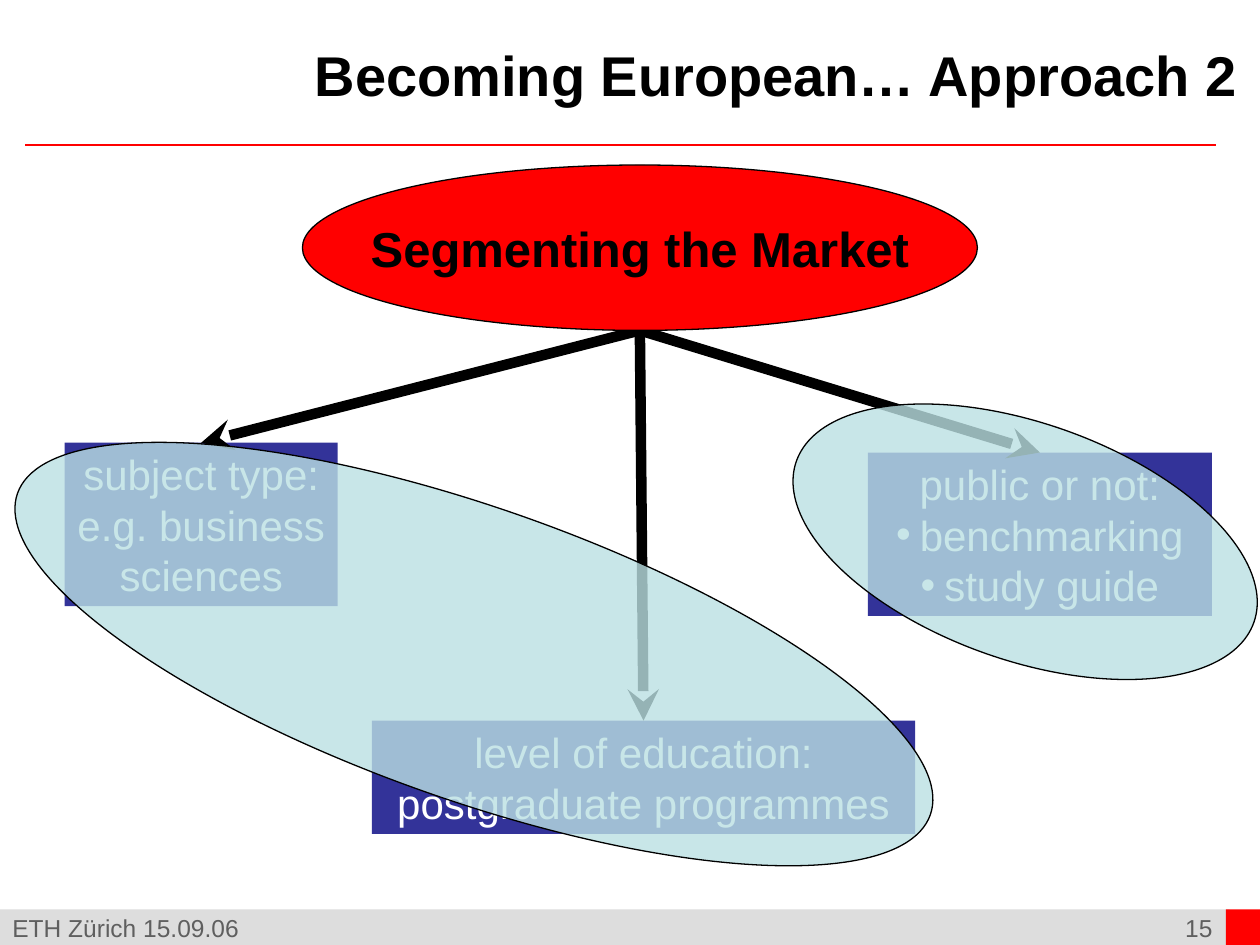
from dataclasses import dataclass

from lxml.etree import SubElement
from pptx import Presentation
from pptx.dml.color import RGBColor
from pptx.enum.shapes import MSO_CONNECTOR, MSO_SHAPE
from pptx.enum.text import MSO_ANCHOR as Anchor, PP_ALIGN as Align
from pptx.oxml.ns import qn
from pptx.util import Pt


@dataclass(frozen=True)
class Theme:
    """Colours, font and type sizes of the slide."""
    red: str = "FF0000"
    black: str = "000000"
    white: str = "FFFFFF"
    navy: str = "333399"
    aqua: str = "BBE0E3"
    band: str = "DDDDDD"
    muted: str = "5F5F5F"
    font: str = "Arial"
    title: int = 32
    hub: int = 28
    body: int = 24
    footer: int = 14
    hairline: float = 0.75
    arrow: float = 6


@dataclass(frozen=True)
class Box:
    """A rectangle in points."""
    left: float
    top: float
    width: float
    height: float

    def inner(self, left, top, width, height):
        """Return a box placed relative to this one."""
        return Box(self.left + left, self.top + top, width, height)

    def lengths(self):
        """Return the four lengths for python-pptx."""
        return [Pt(v) for v in (self.left, self.top, self.width, self.height)]


THEME = Theme()


def rgb(code):
    """Turn a hex code into a colour."""
    return RGBColor.from_string(code)


def write(shape, text, size, color, bold=False, align=Align.LEFT,
          anchor=Anchor.TOP, wrap=True, indent=0, bullets_from=None):
    """Fill a shape with one formatted paragraph per line of text."""
    frame = shape.text_frame
    frame.word_wrap = wrap
    frame.vertical_anchor = anchor
    frame.text = text
    for index, paragraph in enumerate(frame.paragraphs):
        paragraph.alignment = align
        properties = paragraph._p.get_or_add_pPr()
        if indent:
            properties.set("marL", str(Pt(indent)))
            properties.set("indent", str(-Pt(indent)))
        if bullets_from is not None and index >= bullets_from:
            SubElement(properties, qn("a:buFont"), typeface=THEME.font)
            SubElement(properties, qn("a:buChar"), char="•")
        font = paragraph.font
        font.name, font.size, font.bold = THEME.font, Pt(size), bold
        font.color.rgb = rgb(color)


def add_figure(slide, kind, box, fill, outline=None, opacity=None, rotation=0):
    """Add a flat preset shape, optionally outlined, translucent or turned."""
    figure = slide.shapes.add_shape(kind, *box.lengths())
    figure.shadow.inherit = False
    figure.rotation = rotation
    figure.fill.solid()
    figure.fill.fore_color.rgb = rgb(fill)
    if opacity is not None:
        color = figure._element.spPr.find(".//" + qn("a:srgbClr"))
        SubElement(color, qn("a:alpha"), val=str(opacity * 1000))
    if outline:
        figure.line.color.rgb = rgb(outline)
        figure.line.width = Pt(THEME.hairline)
    else:
        figure.line.fill.background()
    return figure


def add_line(slide, start, end, color, width, arrow=False):
    """Add a straight line, with a stealth head at its end if asked."""
    line = slide.shapes.add_connector(
        MSO_CONNECTOR.STRAIGHT, *(Pt(v) for v in (*start, *end)))
    line.line.color.rgb = rgb(color)
    line.line.width = Pt(width)
    if arrow:
        SubElement(line.line._get_or_add_ln(), qn("a:tailEnd"), type="stealth")
    SubElement(line._element.spPr, qn("a:effectLst"))
    return line


def add_label(slide, box, text, **style):
    """Add a text box."""
    write(slide.shapes.add_textbox(*box.lengths()), text, **style)


def build_header(slide, box):
    """Place the title and the rule under it."""
    rule_y = box.top + box.height
    add_line(slide, (box.left + 14.4, rule_y), (box.left + 694.8, rule_y),
             THEME.red, THEME.hairline)
    add_label(slide, box.inner(172.8, 20.2, 547.2, 44),
              "Becoming European… Approach 2", size=THEME.title,
              color=THEME.black, bold=True, anchor=Anchor.MIDDLE)


def build_footer(slide, box):
    """Place the grey band, red corner, event and page number."""
    style = dict(size=THEME.footer, color=THEME.muted)
    add_figure(slide, MSO_SHAPE.RECTANGLE, box.inner(0, 1.5, 702.7, 20.2), THEME.band)
    add_figure(slide, MSO_SHAPE.RECTANGLE, box.inner(700.5, 1.5, 21.6, 21.6), THEME.red)
    add_label(slide, box.inner(626.4, 0, 73.6, 24), "15", align=Align.RIGHT, **style)
    add_label(slide, box.inner(0, 0, 620.6, 24), "ETH Zürich 15.09.06", **style)


def build_segments(slide, box):
    """Place the market hub, its three segments and the groups over them."""
    segments = [
        (box.inner(37, 158.7, 156, 93.4),
         "subject type:\ne.g. business\nsciences", dict(wrap=False)),
        (box.inner(212.5, 317.5, 310.5, 64.8),
         "level of education:\npostgraduate programmes", {}),
        (box.inner(496, 164.3, 196.5, 93.4),
         "public or not:\nbenchmarking\nstudy guide",
         dict(indent=13.5, bullets_from=1)),
    ]
    hub_box = box.inner(172.8, 0, 385.7, 94.5)
    hub_bottom = (hub_box.left + hub_box.width / 2, hub_box.top + hub_box.height)

    cards = []
    for place, text, extra in segments:
        card = add_figure(slide, MSO_SHAPE.RECTANGLE, place, THEME.navy)
        write(card, text, size=THEME.body, color=THEME.white,
              align=Align.CENTER, **extra)
        cards.append(card)
    for card in cards:
        arrow = add_line(slide, hub_bottom, hub_bottom, THEME.black,
                         THEME.arrow, arrow=True)
        arrow.end_connect(card, 0)

    hub = add_figure(slide, MSO_SHAPE.OVAL, hub_box, THEME.red, THEME.black)
    write(hub, "Segmenting the Market", size=THEME.hub, color=THEME.black,
          bold=True, align=Align.CENTER, anchor=Anchor.MIDDLE, wrap=False)
    for group in (box.inner(-5.7, 196, 553, 167),
                  box.inner(447.2, 147.6, 277.2, 135.4)):
        add_figure(slide, MSO_SHAPE.OVAL, group, THEME.aqua, THEME.black,
                   opacity=80, rotation=19.4)


def main():
    """Build and save the slide."""
    deck = Presentation()
    deck.slide_width, deck.slide_height = Pt(720), Pt(540)
    slide = deck.slides.add_slide(deck.slide_layouts[6])
    build_footer(slide, Box(0, 518.2, 720, 21.8))
    build_header(slide, Box(0, 0, 720, 82.8))
    build_segments(slide, Box(0, 94.3, 720, 410))
    deck.save("out.pptx")


if __name__ == "__main__":
    main()
